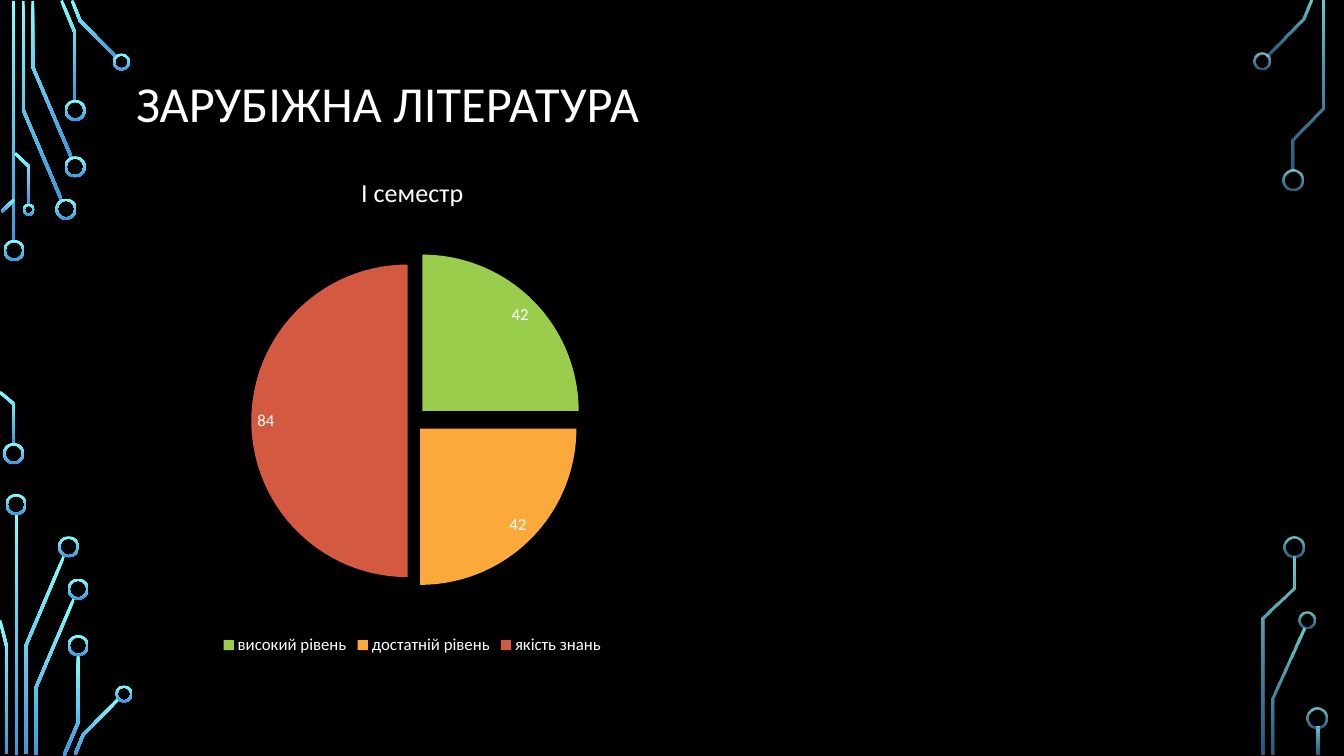
from itertools import pairwise

from pptx import Presentation
from pptx.chart.data import CategoryChartData
from pptx.dml.color import RGBColor
from pptx.enum.chart import XL_CHART_TYPE, XL_LABEL_POSITION, XL_LEGEND_POSITION
from pptx.enum.shapes import MSO_SHAPE
from pptx.enum.text import MSO_ANCHOR, PP_ALIGN
from pptx.oxml import parse_xml
from pptx.oxml.ns import nsdecls, qn
from pptx.util import Inches, Pt

PIE = XL_CHART_TYPE.PIE
INSIDE_END = XL_LABEL_POSITION.INSIDE_END
BOTTOM = XL_LEGEND_POSITION.BOTTOM
DONUT = MSO_SHAPE.DONUT
MIDDLE = MSO_ANCHOR.MIDDLE
LEFT = PP_ALIGN.LEFT

WIDTH, HEIGHT = Inches(13.33), Inches(7.5)
COLUMNS, ROWS = 133.3, 75
TRACE_WIDTH = 0.28
RING_WIDTH = 0.22
SOLID = (100, 100)
FADED = (80, 60)

LEFT_TRACES = [
    [(1.35, 0.1), (1.35, 24)],
    [(2.3, 0.1), (2.3, 10.9), (6.1, 19.85)],
    [(3.25, 0.1), (3.25, 6.65), (7.1, 15.65)],
    [(6.1, 0.05), (7.45, 3.3), (7.45, 10)],
    [(7.15, 0.05), (7.95, 2.05), (11.55, 5.7)],
    [(0.15, 21), (1.4, 19.8)],
    [(0, 38.9), (1.4, 40.1), (1.4, 44.1)],
    [(1.5, 15.2), (2.9, 16.55), (2.9, 20.3)],
    [(1.65, 51), (1.65, 74.9)],
    [(2.55, 74.8), (2.55, 64.1), (6.35, 55.15)],
    [(0, 61.55), (0.65, 64.1), (0.65, 74.8)],
    [(3.55, 74.9), (3.55, 68.25), (7.35, 59.35)],
    [(6.35, 74.95), (7.75, 71.7), (7.75, 65)],
    [(7.45, 74.85), (8.25, 72.9), (11.8, 69.3)],
]
LEFT_RINGS = [
    (1.4, 24.85, 2.1), (1.35, 45, 2.1), (6.55, 20.75, 2.1), (7.45, 16.55, 2.1),
    (7.45, 10.95, 2.1), (12.05, 6.15, 1.7), (2.85, 20.8, 1.2), (1.6, 50.05, 2.1),
    (6.8, 54.25, 2.1), (7.75, 58.45, 2.1), (7.75, 64.05, 2.1), (12.3, 68.85, 1.7),
]
RIGHT_TRACES = [
    [(130.05, 0.05), (129.25, 1.95), (125.7, 5.55)],
    [(126.25, 74.9), (126.25, 69.35), (129.3, 62.35)],
    [(131.25, 0.1), (131.25, 10.75), (128.2, 13.85), (128.2, 16.9)],
    [(125.25, 74.9), (125.25, 61.35), (128.35, 58.35), (128.35, 55.2)],
    [(130.75, 72.1), (130.75, 74.9)],
]
RIGHT_RINGS = [
    (125.15, 6.05, 1.7), (128.25, 17.85, 2.1), (129.65, 61.55, 1.7),
    (128.3, 54.25, 2.1), (130.65, 71.2, 2.1),
]
LEVELS = [
    ("високий рівень", 42, "9ACD4C", 9),
    ("достатній рівень", 42, "FAA93A", 7),
    ("якість знань", 84, "D35940", 3),
]


def color(value):
    return RGBColor.from_string(value)


def outline(points, width):
    line = [complex(*point) for point in points]
    normals = [1j * (end - start) / abs(end - start) for start, end in pairwise(line)]
    joints = zip([normals[0], *normals], [*normals, normals[-1]])
    shifts = [
        (before + after) / (1 + (before * after.conjugate()).real) * width / 2
        for before, after in joints
    ]
    one_side = [point + shift for point, shift in zip(line, shifts)]
    other_side = [point - shift for point, shift in zip(line, shifts)]
    return [(point.real, point.imag) for point in one_side + other_side[::-1]]


def explosion(percent):
    return parse_xml(f'<c:explosion {nsdecls("c")} val="{percent}"/>')


class CircuitSlide:
    font_name = "Calibri"
    text_color = "FFFFFF"
    gradient = ("82FFFF", "3D97DE")

    def __init__(self, presentation):
        self.slide = presentation.slides.add_slide(presentation.slide_layouts[5])
        fill = self.slide.background.fill
        fill.solid()
        fill.fore_color.rgb = color("000000")

    def across(self, columns):
        return round(WIDTH * columns / COLUMNS)

    def down(self, rows):
        return round(HEIGHT * rows / ROWS)

    def box(self, left, top, width, height):
        return self.across(left), self.down(top), self.across(width), self.down(height)

    def style_font(self, font, size):
        values = {"name": self.font_name, "size": Pt(size), "bold": False}
        for name, value in values.items():
            setattr(font, name, value)
        font.color.rgb = color(self.text_color)

    def glow(self, shape, opacities):
        shape.shadow.inherit = False
        shape.line.fill.background()
        shape.fill.gradient()
        shape.fill.gradient_angle = 270
        for stop, value in zip(shape.fill.gradient_stops, self.gradient):
            stop.color.rgb = color(value)
        if opacities != SOLID:
            stops = shape.element.spPr.iter(qn("a:srgbClr"))
            for stop_color, opacity in zip(stops, opacities):
                stop_color.append(
                    parse_xml(f'<a:alpha {nsdecls("a")} val="{opacity * 1000}"/>')
                )

    def trace(self, points, opacities):
        start, *corners = [
            (self.across(x), self.down(y)) for x, y in outline(points, TRACE_WIDTH)
        ]
        builder = self.slide.shapes.build_freeform(*start)
        builder.add_line_segments(corners)
        self.glow(builder.convert_to_shape(), opacities)

    def ring(self, x, y, size, opacities):
        frame = self.box(x - size / 2, y - size / 2, size, size)
        shape = self.slide.shapes.add_shape(DONUT, *frame)
        shape.adjustments[0] = RING_WIDTH / size
        self.glow(shape, opacities)

    def title(self, text, frame, size):
        shape = self.slide.shapes.title
        places = ("left", "top", "width", "height")
        for name, value in zip(places, self.box(*frame)):
            setattr(shape, name, value)
        shape.text_frame.text = text
        shape.text_frame.vertical_anchor = MIDDLE
        shape.text_frame.word_wrap = True
        paragraph = shape.text_frame.paragraphs[0]
        paragraph.alignment = LEFT
        paragraph.line_spacing = 0.9
        self.style_font(paragraph.runs[0].font, size)

    def pie(self, name, levels, frame):
        data = CategoryChartData()
        data.categories = [level[0] for level in levels]
        data.add_series(name, [level[1] for level in levels])
        chart = self.slide.shapes.add_chart(PIE, *self.box(*frame), data).chart
        self.style_font(chart.font, 10)

        chart.has_title = True
        chart.chart_title.include_in_layout = False
        chart.chart_title.text_frame.text = name
        self.style_font(chart.chart_title.text_frame.paragraphs[0].runs[0].font, 18.6)

        chart.has_legend = True
        chart.legend.position = BOTTOM
        chart.legend.include_in_layout = False
        self.style_font(chart.legend.font, 12)

        plot = chart.plots[0]
        plot.vary_by_categories = True
        plot.has_data_labels = True
        labels = plot.data_labels
        labels.show_value = True
        labels.show_percentage = False
        labels.position = INSIDE_END
        self.style_font(labels.font, 12)

        series = next(chart.element.iter(qn("c:ser")))
        series.find(qn("c:tx")).addnext(explosion(21))
        for index, (_, _, fill_color, _) in enumerate(levels):
            point_format = plot.series[0].points[index].format
            point_format.fill.solid()
            point_format.fill.fore_color.rgb = color(fill_color)
            point_format.line.fill.background()
        for point, level in zip(series.findall(qn("c:dPt")), levels):
            point.find(qn("c:spPr")).addprevious(explosion(level[3]))


def main():
    presentation = Presentation()
    presentation.slide_width, presentation.slide_height = WIDTH, HEIGHT
    slide = CircuitSlide(presentation)
    for traces, rings, opacities in (
        (LEFT_TRACES, LEFT_RINGS, SOLID),
        (RIGHT_TRACES, RIGHT_RINGS, FADED),
    ):
        for points in traces:
            slide.trace(points, opacities)
        for x, y, size in rings:
            slide.ring(x, y, size, opacities)
    slide.title("ЗАРУБІЖНА ЛІТЕРАТУРА", (12.5, 2.4, 108.3, 16.2), 36)
    slide.pie("І семестр", LEVELS, (5.2, 15.3, 71.4, 50.1))
    presentation.save("out.pptx")


if __name__ == "__main__":
    main()
